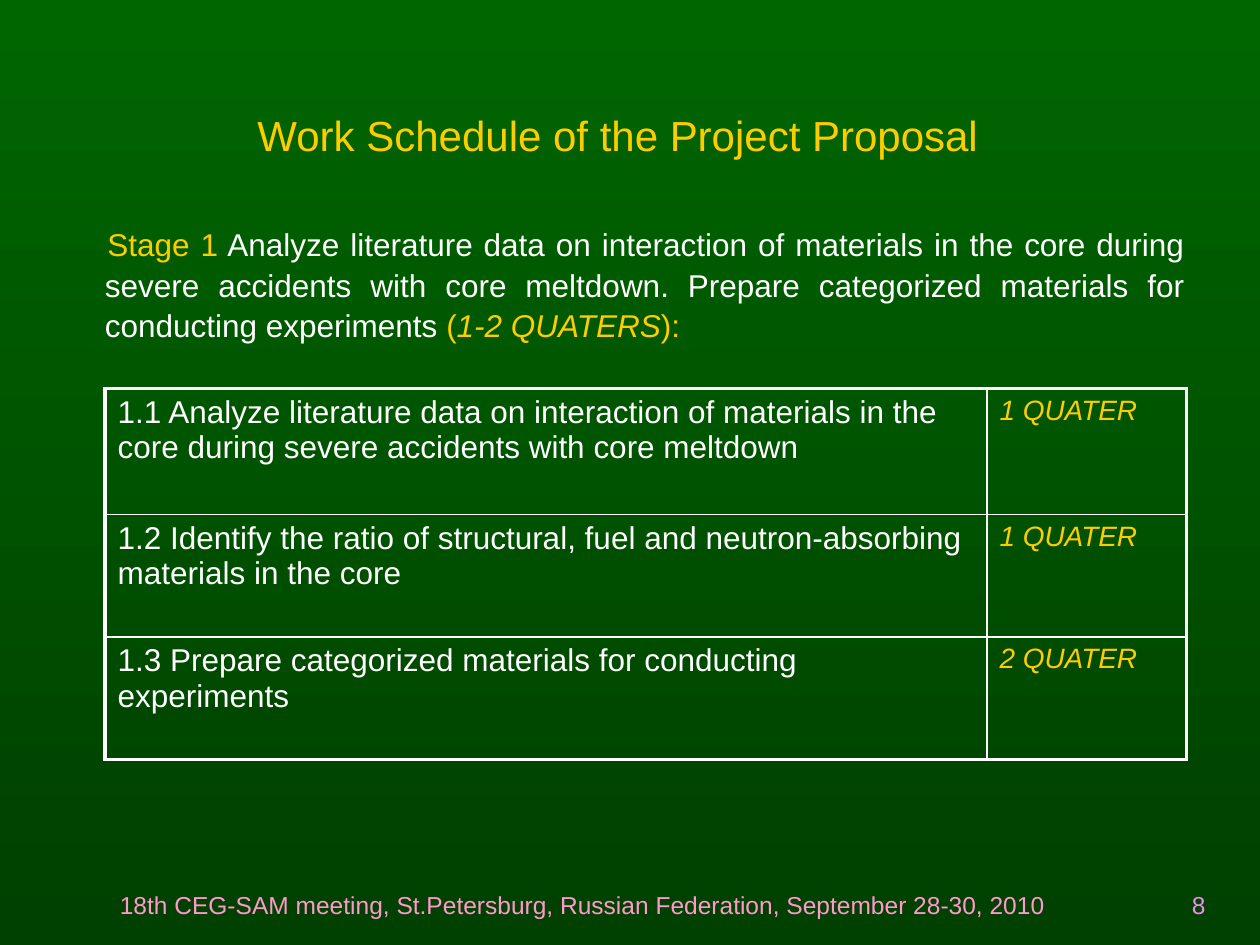
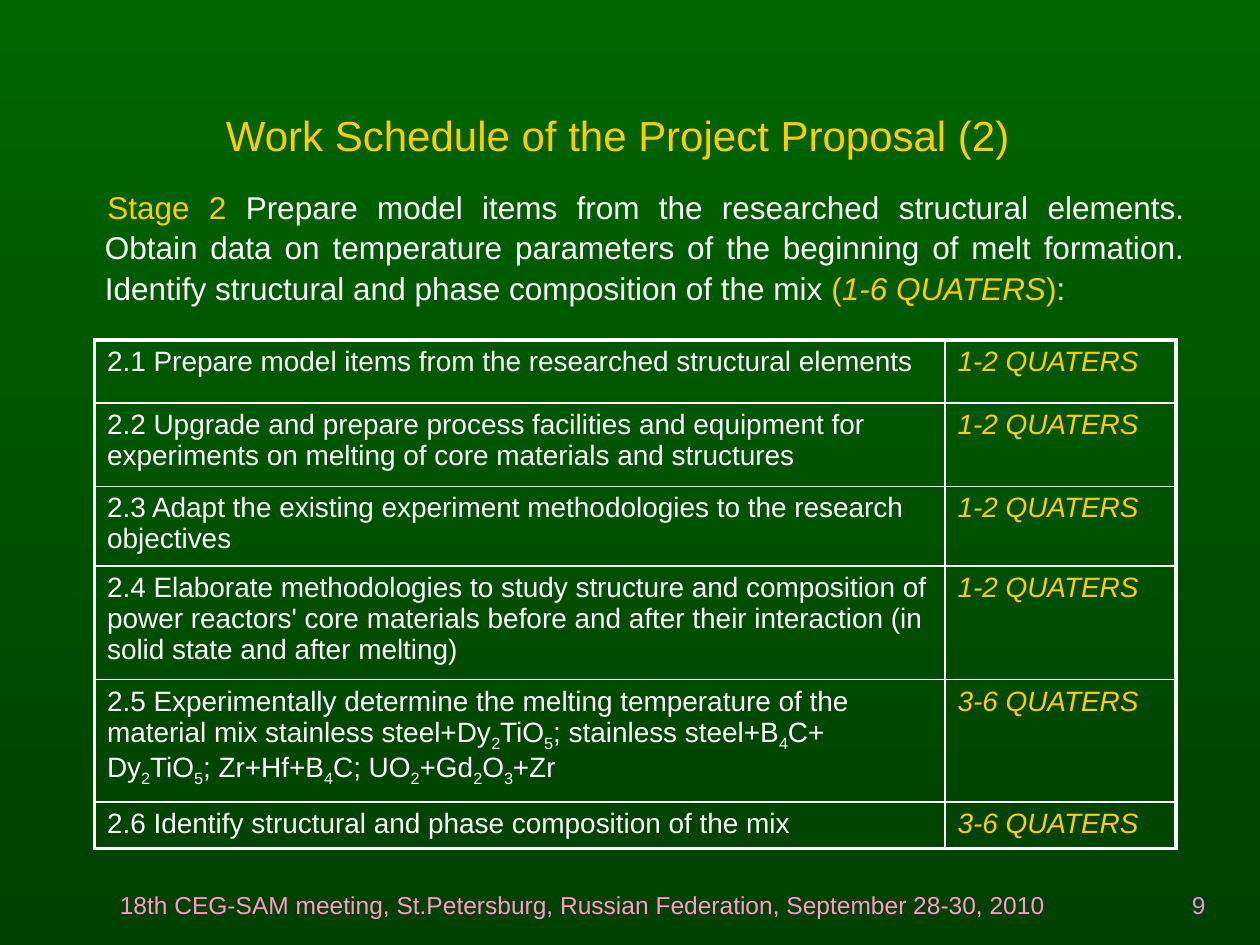
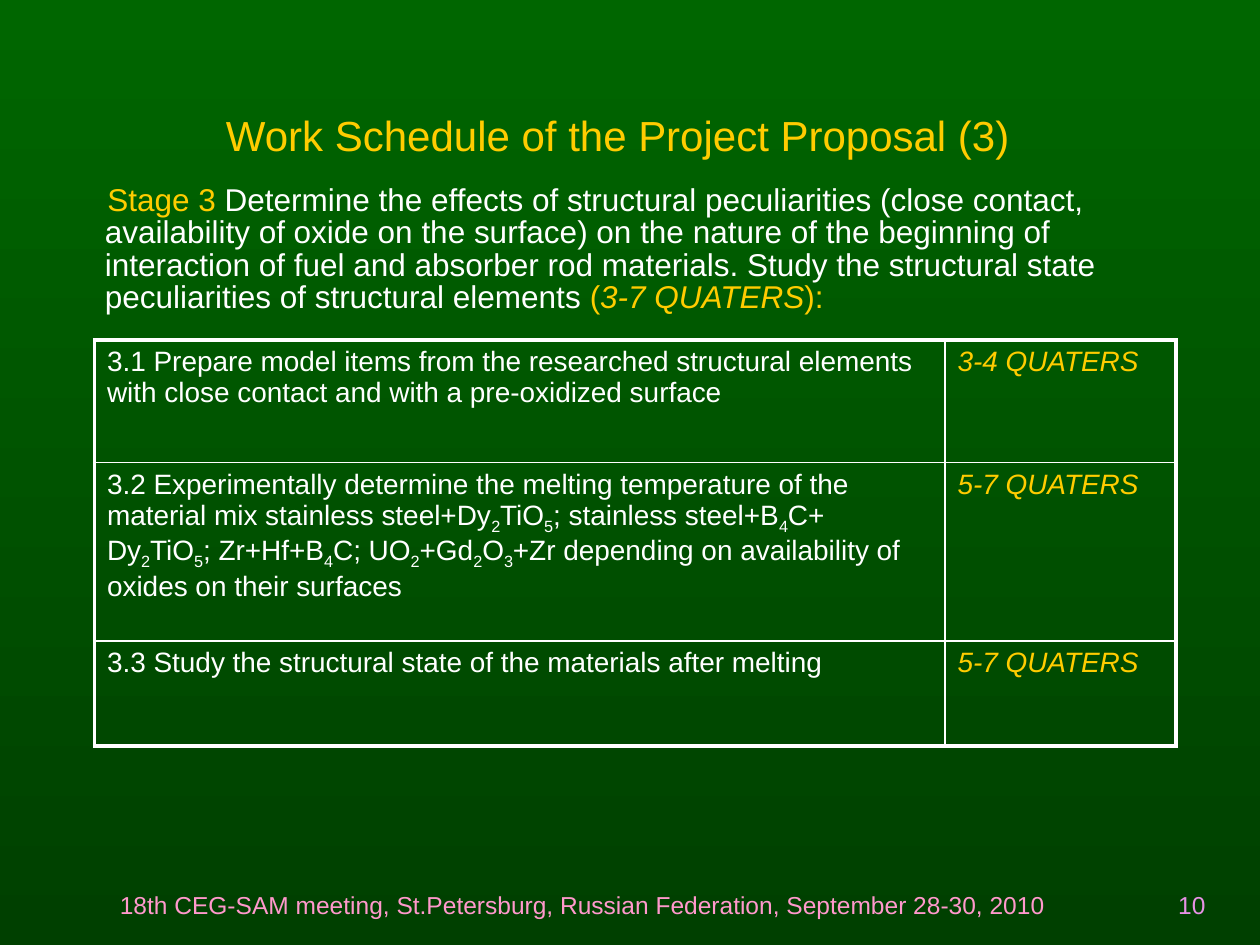
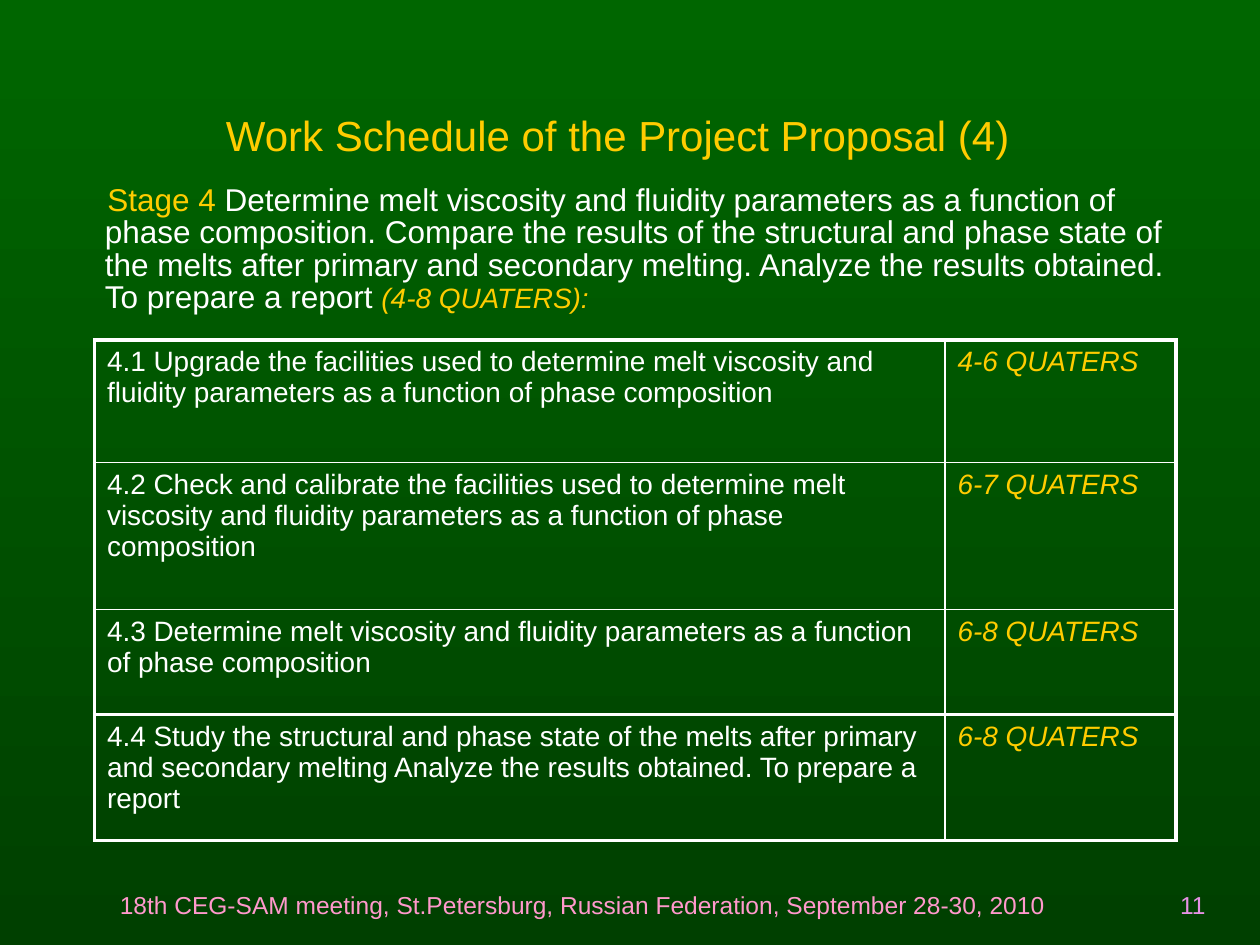
"""Build the four work schedule slides of the project proposal."""

from dataclasses import dataclass
from typing import NamedTuple

from lxml.etree import SubElement
from pptx import Presentation
from pptx.dml.color import RGBColor
from pptx.enum.text import MSO_ANCHOR, PP_ALIGN
from pptx.oxml.ns import qn
from pptx.presentation import Presentation as Deck
from pptx.slide import Slide
from pptx.table import Table, _Cell
from pptx.text.text import TextFrame, _Paragraph, _Run
from pptx.util import Pt


@dataclass(frozen=True)
class Theme:
    """Colours, font and type sizes of the deck."""

    background_top: str = "006600"
    background_bottom: str = "004000"
    gold: str = "FFCC00"
    white: str = "FFFFFF"
    footer: str = "FF99CC"
    number: str = "E692E4"
    font: str = "Arial"
    title_size: float = 24
    body_size: float = 18
    small_size: float = 16
    footer_size: float = 14
    outer_line: float = 2.25
    inner_line: float = 1


class Box(NamedTuple):
    """Place and size in points."""

    left: float
    top: float
    width: float
    height: float


class Span(NamedTuple):
    """Piece of text with its own look."""

    text: str
    color: str
    italic: bool = False
    size: float = 18


class Task(NamedTuple):
    """Table row: an underscore in the text lowers the character after it."""

    text: str
    period: str
    height: float


@dataclass(frozen=True)
class Stage:
    """Content and layout of one schedule slide."""

    title: str
    intro: list[Span]
    tasks: list[Task]
    justified: bool = False
    intro_top: float = 102.24
    intro_inset: float = 3.6
    table_left: float = 54
    table_top: float = 194.4
    columns: tuple[float, float] = (486, 132)
    task_size: float = 16
    heavy_rules: tuple[int, ...] = ()


THEME = Theme()
TITLE_BOX = Box(24, 18, 670, 104.4)
FOOTER_BOX = Box(36, 492, 594, 37.2)
NUMBER_BOX = Box(516, 492, 180, 37.2)
INTRO_LEFT, INTRO_WIDTH, INTRO_HEIGHT = 24, 660, 84
FOOTER_TEXT = "18th CEG-SAM meeting, St.Petersburg, Russian Federation, September 28-30, 2010"
FIRST_NUMBER = 8
TITLE = "Work Schedule of the Project Proposal"
MELTING_TASK = (
    "Experimentally determine the melting temperature of the material mix "
    "stainless steel+Dy_2TiO_5; stainless steel+B_4C+ Dy_2TiO_5; Zr+Hf+B_4C; UO_2+Gd_2O_3+Zr"
)

STAGES = [
    Stage(
        TITLE,
        [
            Span("Stage 1", THEME.gold),
            Span(
                " Analyze literature data on interaction of materials in the core during severe "
                "accidents with core meltdown. Prepare categorized materials for conducting experiments ",
                THEME.white,
            ),
            Span("(", THEME.gold),
            Span("1-2 QUATERS", THEME.gold, True),
            Span("):", THEME.gold),
        ],
        [
            Task(
                "1.1 Analyze literature data on interaction of materials in the core "
                "during severe accidents with core meltdown",
                "1 QUATER",
                72,
            ),
            Task(
                "1.2 Identify the ratio of structural, fuel and neutron-absorbing materials in the core",
                "1 QUATER",
                70,
            ),
            Task("1.3 Prepare categorized materials for conducting experiments", "2 QUATER", 70),
        ],
        justified=True,
        intro_top=108,
        intro_inset=19.3,
        table_left=60,
        table_top=222,
        columns=(504, 114),
        task_size=THEME.body_size,
    ),
    Stage(
        f"{TITLE} (2)",
        [
            Span("Stage 2", THEME.gold),
            Span(
                " Prepare model items from the researched structural elements. Obtain data on "
                "temperature parameters of the beginning of melt formation. Identify structural "
                "and phase composition of the mix ",
                THEME.white,
            ),
            Span("(", THEME.gold),
            Span("1-6 QUATERS", THEME.gold, True),
            Span(")", THEME.gold),
            Span(":", THEME.white),
        ],
        [
            Task("2.1 Prepare model items from the researched structural elements", "1-2 QUATERS", 36),
            Task(
                "2.2 Upgrade and prepare process facilities and equipment for experiments "
                "on melting of core materials and structures",
                "1-2 QUATERS",
                47.5,
            ),
            Task(
                "2.3 Adapt the existing experiment methodologies to the research objectives",
                "1-2 QUATERS",
                41,
            ),
            Task(
                "2.4 Elaborate methodologies to study structure and composition of power reactors' "
                "core materials before and after their interaction (in solid state and after melting)",
                "1-2 QUATERS",
                60,
            ),
            Task(f"2.5 {MELTING_TASK}", "3-6 QUATERS", 65.5),
            Task("2.6 Identify structural and phase composition of the mix", "3-6 QUATERS", 25),
        ],
        justified=True,
    ),
    Stage(
        f"{TITLE} (3)",
        [
            Span("Stage 3 ", THEME.gold),
            Span(
                "Determine the effects of structural peculiarities (close contact, availability of "
                "oxide on the surface) on the nature of the beginning of interaction of fuel and "
                "absorber rod materials. Study the structural state peculiarities of structural elements ",
                THEME.white,
            ),
            Span("(", THEME.gold),
            Span("3-7 QUATERS", THEME.gold, True),
            Span("):", THEME.gold),
        ],
        [
            Task(
                "3.1 Prepare model items from the researched structural elements "
                "with close contact and with a pre-oxidized surface",
                "3-4 QUATERS",
                70,
            ),
            Task(
                f"3.2 {MELTING_TASK} depending on availability of oxides on their surfaces",
                "5-7 QUATERS",
                102,
            ),
            Task("3.3 Study the structural state of the materials after melting", "5-7 QUATERS", 60),
        ],
    ),
    Stage(
        f"{TITLE} (4)",
        [
            Span("Stage 4", THEME.gold),
            Span(
                " Determine melt viscosity and fluidity parameters as a function of phase composition. "
                "Compare the results of the structural and phase state of the melts after primary and "
                "secondary melting. Analyze the results obtained. To prepare a report ",
                THEME.white,
            ),
            Span("(4-8 QUATERS):", THEME.gold, True, THEME.small_size),
        ],
        [
            Task(
                "4.1 Upgrade the facilities used to determine melt viscosity and fluidity "
                "parameters as a function of phase composition",
                "4-6 QUATERS",
                70,
            ),
            Task(
                "4.2 Check and calibrate the facilities used to determine melt viscosity "
                "and fluidity parameters as a function of phase composition",
                "6-7 QUATERS",
                84,
            ),
            Task(
                "4.3 Determine melt viscosity and fluidity parameters as a function of phase composition",
                "6-8 QUATERS",
                60,
            ),
            Task(
                "4.4 Study the structural and phase state of the melts after primary and secondary "
                "melting Analyze the results obtained. To prepare a report",
                "6-8 QUATERS",
                72,
            ),
        ],
        heavy_rules=(3,),
    ),
]


def format_run(run: _Run, size: float, color: str, italic: bool = False) -> None:
    """Give a run its font, size and colour."""
    run.font.name = THEME.font
    run.font.size = Pt(size)
    run.font.bold = False
    run.font.italic = italic
    run.font.color.rgb = RGBColor.from_string(color)


def add_span(paragraph: _Paragraph, span: Span) -> _Run:
    """Append one formatted piece of text."""
    run = paragraph.add_run()
    run.text = span.text
    format_run(run, span.size, span.color, span.italic)
    return run


def add_formula_text(paragraph: _Paragraph, text: str, size: float) -> None:
    """Write text whose underscores mark subscripts."""
    first, *others = text.split("_")
    add_span(paragraph, Span(first, THEME.white, size=size))
    for part in others:
        subscript = add_span(paragraph, Span(part[0], THEME.white, size=size))
        subscript.font._element.set("baseline", "-25000")
        add_span(paragraph, Span(part[1:], THEME.white, size=size))


def add_text_box(slide: Slide, box: Box) -> TextFrame:
    """Add an empty wrapping text box."""
    text_frame = slide.shapes.add_textbox(*map(Pt, box)).text_frame
    text_frame.word_wrap = True
    return text_frame


def add_footer(slide: Slide, box: Box, text: str, color: str, alignment: PP_ALIGN) -> None:
    """Add one text of the bottom band."""
    text_frame = add_text_box(slide, box)
    text_frame.text = text
    text_frame.vertical_anchor = MSO_ANCHOR.BOTTOM
    paragraph = text_frame.paragraphs[0]
    paragraph.alignment = alignment
    format_run(paragraph.runs[0], THEME.footer_size, color)


def set_title(slide: Slide, text: str) -> None:
    """Place and format the title placeholder."""
    title = slide.shapes.title
    title.left, title.top, title.width, title.height = map(Pt, TITLE_BOX)
    text_frame = title.text_frame
    text_frame.text = text
    text_frame.word_wrap = True
    text_frame.vertical_anchor = MSO_ANCHOR.MIDDLE
    text_frame.margin_top, text_frame.margin_right = Pt(16.8), Pt(19.2)
    paragraph = text_frame.paragraphs[0]
    paragraph.alignment = PP_ALIGN.CENTER
    format_run(paragraph.runs[0], THEME.title_size, THEME.gold)


def add_intro(slide: Slide, stage: Stage) -> None:
    """Add the paragraph that describes the stage."""
    text_frame = add_text_box(slide, Box(INTRO_LEFT, stage.intro_top, INTRO_WIDTH, INTRO_HEIGHT))
    text_frame.margin_top = Pt(stage.intro_inset)
    paragraph = text_frame.paragraphs[0]
    paragraph.alignment = PP_ALIGN.JUSTIFY if stage.justified else PP_ALIGN.LEFT
    paragraph.line_spacing = 1.07 if stage.justified else 0.86
    properties = paragraph._p.get_or_add_pPr()
    properties.set("marL", str(Pt(28.8)))
    properties.set("indent", str(Pt(1.44)))
    for span in stage.intro:
        add_span(paragraph, span)


def set_borders(cell: _Cell, widths: dict[str, float]) -> None:
    """Draw the cell's sides and leave it unfilled."""
    properties = cell._tc.get_or_add_tcPr()
    for side, width in widths.items():
        line = SubElement(properties, qn(f"a:ln{side}"), w=str(Pt(width)))
        fill = SubElement(line, qn("a:solidFill"))
        SubElement(fill, qn("a:srgbClr"), val=THEME.white)
    cell.fill.background()


def rule_table(table: Table, heavy_rules: tuple[int, ...]) -> None:
    """Draw a heavy frame and light inner lines."""
    row_count, column_count = len(table.rows), len(table.columns)
    heavy_rows = {0, row_count, *heavy_rules}
    heavy_columns = {0, column_count}

    def width(heavy: bool) -> float:
        """Choose the line width."""
        return THEME.outer_line if heavy else THEME.inner_line

    for row in range(row_count):
        for column in range(column_count):
            set_borders(
                table.cell(row, column),
                {
                    "L": width(column in heavy_columns),
                    "R": width(column + 1 in heavy_columns),
                    "T": width(row in heavy_rows),
                    "B": width(row + 1 in heavy_rows),
                },
            )


def add_task_table(slide: Slide, stage: Stage) -> None:
    """Add the table of tasks and their periods."""
    box = Box(
        stage.table_left,
        stage.table_top,
        sum(stage.columns),
        sum(task.height for task in stage.tasks),
    )
    table = slide.shapes.add_table(len(stage.tasks), 2, *map(Pt, box)).table
    table.first_row = table.horz_banding = False
    for column, width in zip(table.columns, stage.columns):
        column.width = Pt(width)
    for row, task in zip(table.rows, stage.tasks):
        row.height = Pt(task.height)
        task_cell, period_cell = row.cells
        add_formula_text(task_cell.text_frame.paragraphs[0], task.text, stage.task_size)
        period = Span(task.period, THEME.gold, True, THEME.small_size)
        add_span(period_cell.text_frame.paragraphs[0], period)
    rule_table(table, stage.heavy_rules)


def set_background(presentation: Deck) -> None:
    """Give the slide master its vertical gradient."""
    fill = presentation.slide_master.background.fill
    fill.gradient()
    fill.gradient_angle = 270
    colors = (THEME.background_top, THEME.background_bottom)
    for stop, position, color in zip(fill.gradient_stops, (0, 1), colors):
        stop.position = position
        stop.color.rgb = RGBColor.from_string(color)


def add_stage_slide(presentation: Deck, stage: Stage, number: int) -> None:
    """Add one complete schedule slide."""
    slide = presentation.slides.add_slide(presentation.slide_layouts.get_by_name("Title Only"))
    add_footer(slide, FOOTER_BOX, FOOTER_TEXT, THEME.footer, PP_ALIGN.CENTER)
    add_footer(slide, NUMBER_BOX, str(number), THEME.number, PP_ALIGN.RIGHT)
    set_title(slide, stage.title)
    add_intro(slide, stage)
    add_task_table(slide, stage)


def main() -> None:
    """Build and save the presentation."""
    presentation = Presentation()
    presentation.slide_width, presentation.slide_height = Pt(720), Pt(540)
    set_background(presentation)
    for number, stage in enumerate(STAGES, FIRST_NUMBER):
        add_stage_slide(presentation, stage, number)
    presentation.save("out.pptx")


if __name__ == "__main__":
    main()
